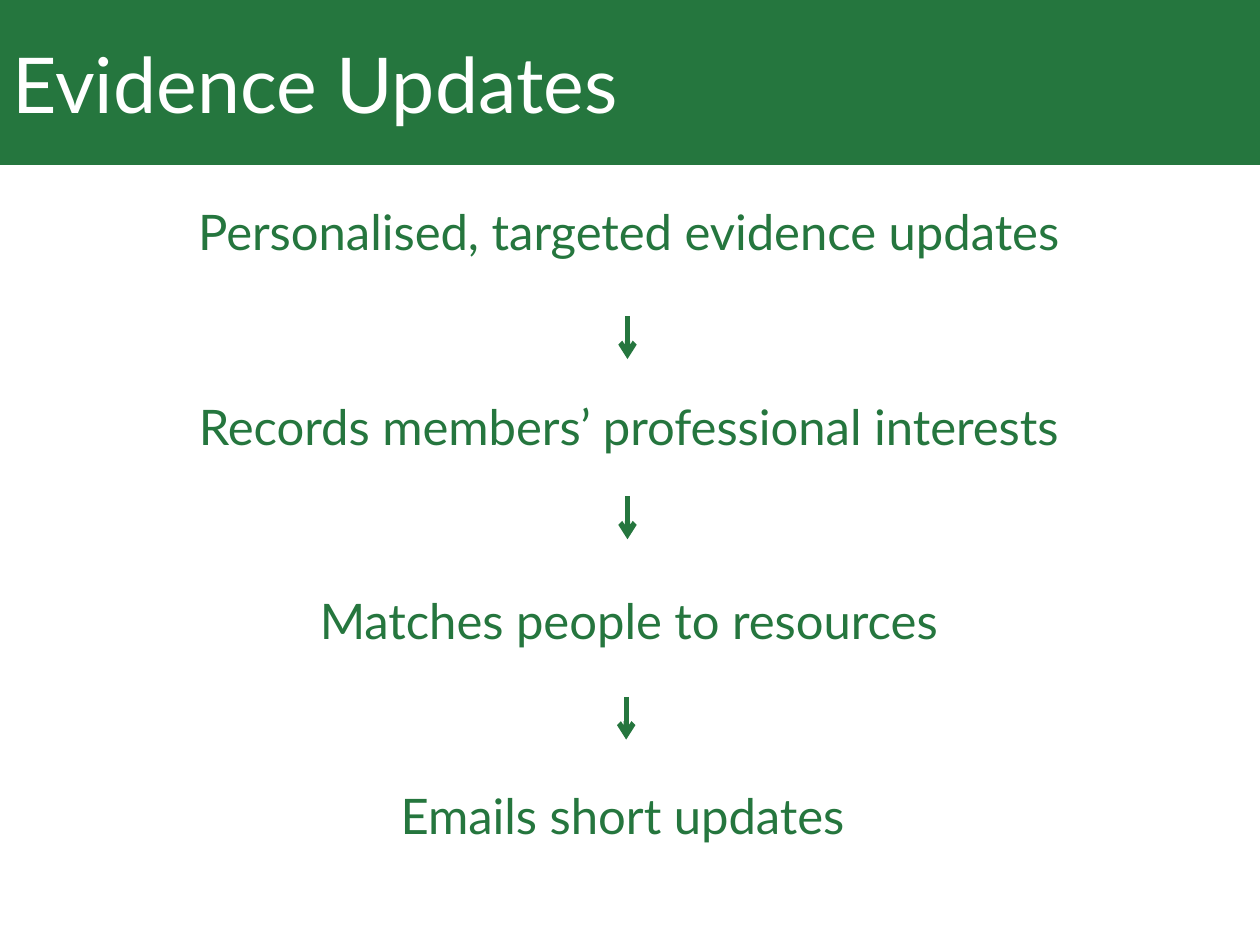
from pptx import Presentation
from pptx.dml.color import RGBColor
from pptx.enum.shapes import MSO_CONNECTOR, MSO_SHAPE
from pptx.enum.text import MSO_ANCHOR, PP_ALIGN
from pptx.oxml.ns import qn
from pptx.util import Inches, Pt
from lxml.etree import SubElement

HUES = {"green": "25763E", "white": "FFFFFF"}


class Deck:
    def __init__(self, slide, font):
        self.slide = slide
        self.font = font

    def hue(self, name):
        return RGBColor.from_string(HUES[name])

    def apply(self, item, form):
        for key, value in form.items():
            setattr(item, key, value)

    def label(self, para, text, size, hue, form):
        self.apply(para, form)
        run = para.add_run()
        run.text = text
        self.apply(run.font, {"name": self.font, "size": Pt(size)})
        run.font.color.rgb = self.hue(hue)

    def title(self, text, box):
        band = self.slide.shapes.add_shape(MSO_SHAPE.RECTANGLE, *map(Inches, box))
        band.shadow.inherit = False
        band.fill.solid()
        band.fill.fore_color.rgb = self.hue("green")
        band.line.fill.background()
        frame = band.text_frame
        self.apply(frame, {"word_wrap": True, "vertical_anchor": MSO_ANCHOR.MIDDLE})
        self.label(frame.paragraphs[0], text, 44, "white", {"alignment": PP_ALIGN.LEFT})

    def steps(self, texts, box, gap):
        frame = self.slide.shapes.add_textbox(*map(Inches, box)).text_frame
        self.apply(frame, {"word_wrap": True, "vertical_anchor": MSO_ANCHOR.TOP})
        for spot, text in enumerate(texts):
            para = frame.add_paragraph() if spot else frame.paragraphs[0]
            form = {"alignment": PP_ALIGN.CENTER, "space_before": Pt(gap if spot else 0)}
            self.label(para, text, 28, "green", form)

    def arrow(self, left, top, length):
        ends = map(Inches, (left, top, left, top + length))
        link = self.slide.shapes.add_connector(MSO_CONNECTOR.STRAIGHT, *ends)
        link.line.color.rgb = self.hue("green")
        link.line.width = Pt(3)
        props = link._element.spPr
        SubElement(props.find(qn("a:ln")), qn("a:tailEnd"), type="arrow")
        SubElement(props, qn("a:effectLst"))


def main():
    show = Presentation()
    show.slide_width, show.slide_height = Inches(10), Inches(7.5)
    deck = Deck(show.slides.add_slide(show.slide_layouts[6]), "Lato")
    deck.title("Evidence Updates", (0, 0, 10, 1.31))
    texts = [
        "Personalised, targeted evidence updates",
        "Records members’ professional interests",
        "Matches people to resources",
        "Emails short updates ",
    ]
    deck.steps(texts, (0.2, 1.55, 9.58, 5.59), 77.6)
    for left, top in ((4.98, 2.51), (4.98, 3.94), (4.97, 5.53)):
        deck.arrow(left, top, 0.34)
    show.save("out.pptx")


if __name__ == "__main__":
    main()
